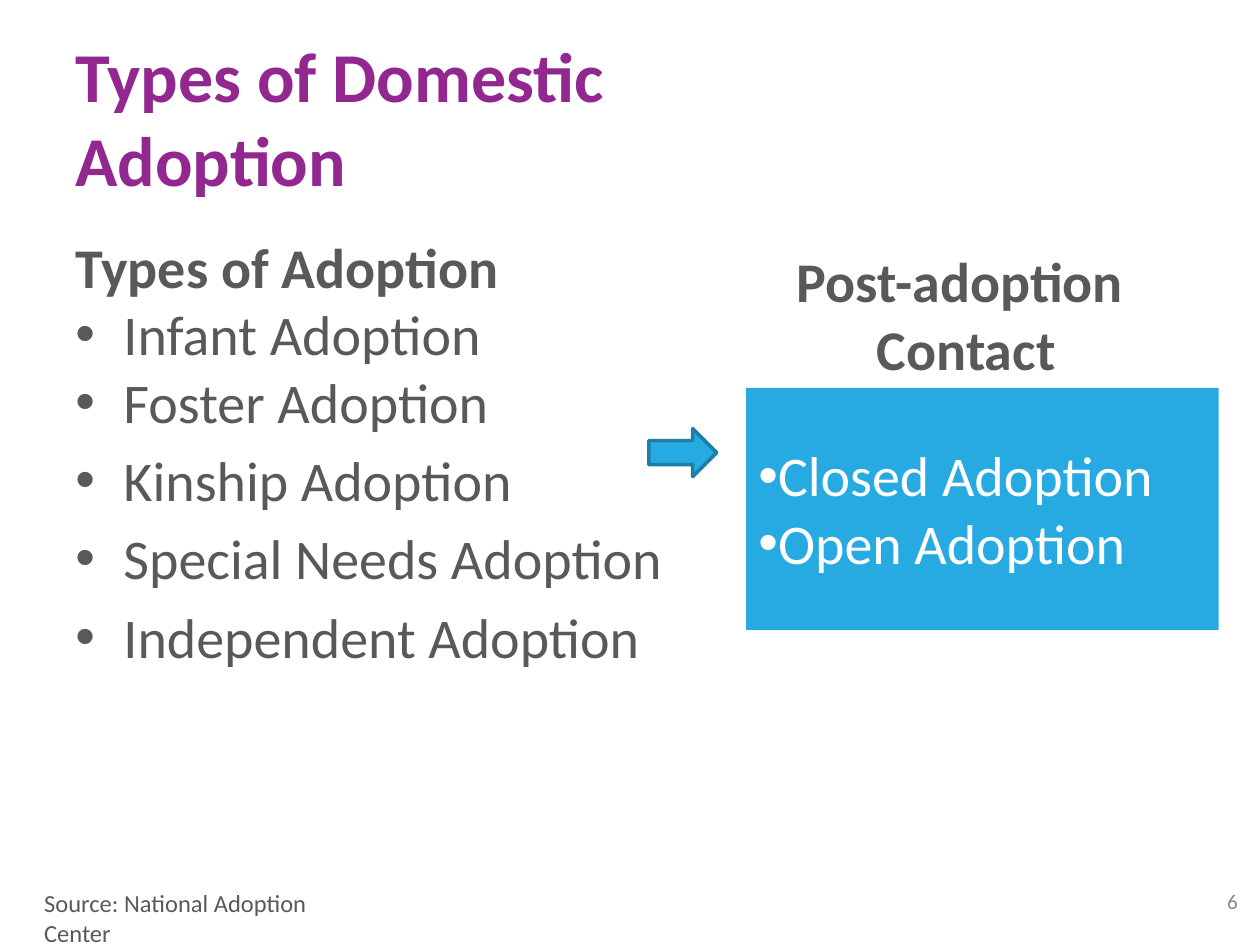
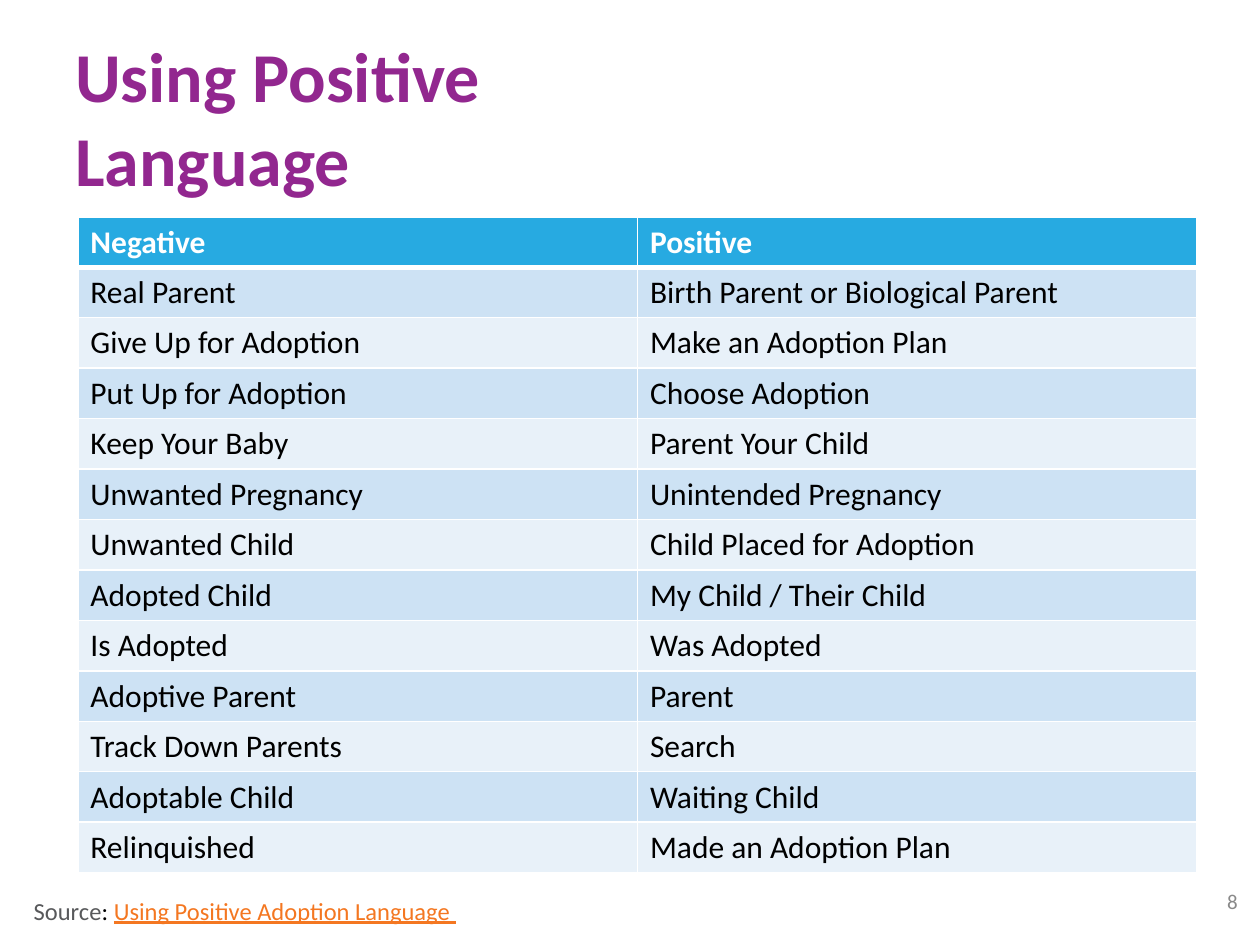
from lxml.etree import SubElement
from pptx import Presentation
from pptx.dml.color import RGBColor
from pptx.enum.shapes import MSO_SHAPE
from pptx.enum.text import MSO_ANCHOR, PP_ALIGN
from pptx.oxml.ns import qn
from pptx.util import Cm, Pt

COLORS = {
    "title": "92278F",
    "text": "58595B",
    "blue": "27AAE1",
    "blue_edge": "1D7EA6",
    "band_dark": "CDE2F4",
    "band_light": "E8F1F9",
    "link": "F47721",
    "number": "898989",
    "white": "FFFFFF",
    "black": "000000",
}
FONT = "Calibri"


def style_font(font, size, color, bold=False):
    font.name = FONT
    font.size = Pt(size)
    font.bold = bold
    font.color.rgb = RGBColor.from_string(COLORS[color])


def add_text(slide, box, lines, size, color, bold=False, align=PP_ALIGN.LEFT,
             anchor=MSO_ANCHOR.TOP, inset=0.13, bullet_indent=0, first_bullet=0):
    text_frame = slide.shapes.add_textbox(*[Cm(length) for length in box]).text_frame
    text_frame.word_wrap = True
    text_frame.vertical_anchor = anchor
    text_frame.margin_left = text_frame.margin_right = Cm(0.25)
    text_frame.margin_top = text_frame.margin_bottom = Cm(inset)
    text_frame.text = "\n".join(lines)
    for index, paragraph in enumerate(text_frame.paragraphs):
        paragraph.alignment = align
        if bullet_indent and index >= first_bullet:
            properties = paragraph._p.get_or_add_pPr()
            properties.set("marL", str(Cm(bullet_indent)))
            properties.set("indent", str(-Cm(bullet_indent)))
            SubElement(properties, qn("a:buFont"), typeface="Arial")
            SubElement(properties, qn("a:buChar"), char="•")
        for run in paragraph.runs:
            style_font(run.font, size, color, bold)
    return text_frame


presentation = Presentation()
presentation.slide_width = Cm(25.4)
presentation.slide_height = Cm(19.05)

slides = []
for title, number in [("Types of Domestic Adoption", "6"), ("Using Positive Language", "8")]:
    slide = presentation.slides.add_slide(presentation.slide_layouts[6])
    add_text(slide, (1.27, 0.76, 13.77, 3.18), [title], 40, "title", bold=True,
             anchor=MSO_ANCHOR.MIDDLE)
    add_text(slide, (23.93, 17.65, 1.27, 1.02), [number], 12, "number",
             align=PP_ALIGN.RIGHT, anchor=MSO_ANCHOR.MIDDLE)
    slides.append(slide)
types_slide, language_slide = slides

adoption_types = ["Types of Adoption", "Infant Adoption", "Foster Adoption", "Kinship Adoption",
                  "Special Needs Adoption", "Independent Adoption"]
types_frame = add_text(types_slide, (1.27, 4.44, 22.86, 12.57), adoption_types, 32, "text",
                       inset=0.25, bullet_indent=0.97, first_bullet=1)
types_frame.paragraphs[0].runs[0].font.bold = True
for paragraph in types_frame.paragraphs[3:]:
    paragraph.space_before = Pt(6.4)

contact_panel = types_slide.shapes.add_shape(
    MSO_SHAPE.RECTANGLE, Cm(15.04), Cm(7.82), Cm(9.53), Cm(4.88))
arrow = types_slide.shapes.add_shape(
    MSO_SHAPE.RIGHT_ARROW, Cm(13.08), Cm(8.64), Cm(1.37), Cm(0.97))
for shape in (contact_panel, arrow):
    shape.shadow.inherit = False
    shape.fill.solid()
    shape.fill.fore_color.rgb = RGBColor.from_string(COLORS["blue"])
contact_panel.line.fill.background()
arrow.line.color.rgb = RGBColor.from_string(COLORS["blue_edge"])
arrow.line.width = Pt(2)

add_text(types_slide, (15.67, 4.85, 7.62, 3), ["Post-adoption ", "Contact"], 32, "text",
         bold=True, align=PP_ALIGN.CENTER)
add_text(types_slide, (15.04, 8.76, 9.58, 3), ["Closed Adoption", "Open Adoption"], 32, "white",
         bullet_indent=0.3)
add_text(types_slide, (0.64, 17.78, 7, 0.86), ["Source: National Adoption Center"], 14, "text")

phrases = [
    ("Negative", "Positive"),
    ("Real Parent", "Birth Parent or Biological Parent"),
    ("Give Up for Adoption", "Make an Adoption Plan"),
    ("Put Up for Adoption", "Choose Adoption"),
    ("Keep Your Baby", "Parent Your Child"),
    ("Unwanted Pregnancy", "Unintended Pregnancy"),
    ("Unwanted Child", "Child Placed for Adoption"),
    ("Adopted Child", "My Child / Their Child"),
    ("Is Adopted", "Was Adopted"),
    ("Adoptive Parent", "Parent"),
    ("Track Down Parents", "Search"),
    ("Adoptable Child", "Waiting Child"),
    ("Relinquished", "Made an Adoption Plan"),
]
table = language_slide.shapes.add_table(
    len(phrases), 2, Cm(1.57), Cm(4.37), Cm(22.56), Cm(0.97 * len(phrases))).table
for row_index, row_phrases in enumerate(phrases):
    is_header = row_index == 0
    band = "band_dark" if row_index % 2 else "band_light"
    for column_index, phrase in enumerate(row_phrases):
        cell = table.cell(row_index, column_index)
        cell.text_frame.text = phrase
        style_font(cell.text_frame.paragraphs[0].runs[0].font, 18,
                   "white" if is_header else "black", is_header)
        cell_properties = cell._tc.get_or_add_tcPr()
        for side in ("lnL", "lnR", "lnT", "lnB"):
            thick = (is_header and side == "lnB") or (row_index == 1 and side == "lnT")
            border = SubElement(cell_properties, qn(f"a:{side}"), w=str(Pt(3 if thick else 1)))
            border_fill = SubElement(border, qn("a:solidFill"))
            SubElement(border_fill, qn("a:srgbClr"), val=COLORS["white"])
        cell.fill.solid()
        cell.fill.fore_color.rgb = RGBColor.from_string(COLORS["blue" if is_header else band])

source_frame = add_text(language_slide, (0.43, 17.73, 20.12, 1.24), ["Source"], 14, "text",
                        anchor=MSO_ANCHOR.MIDDLE, inset=0.25)
for text, color in [(": ", "black"), ("Using Positive Adoption Language ", "link")]:
    run = source_frame.paragraphs[0].add_run()
    run.text = text
    style_font(run.font, 14, color)
    run.font.underline = color == "link"

presentation.save("out.pptx")
